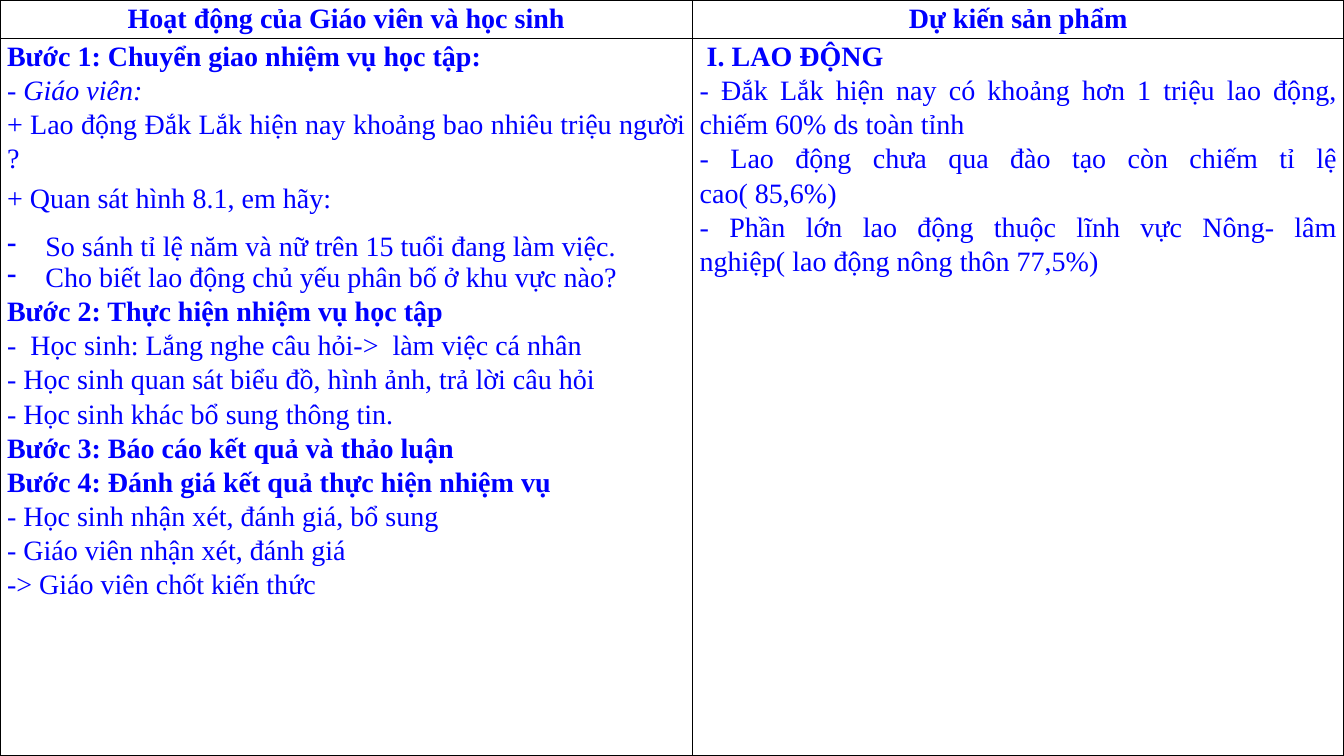
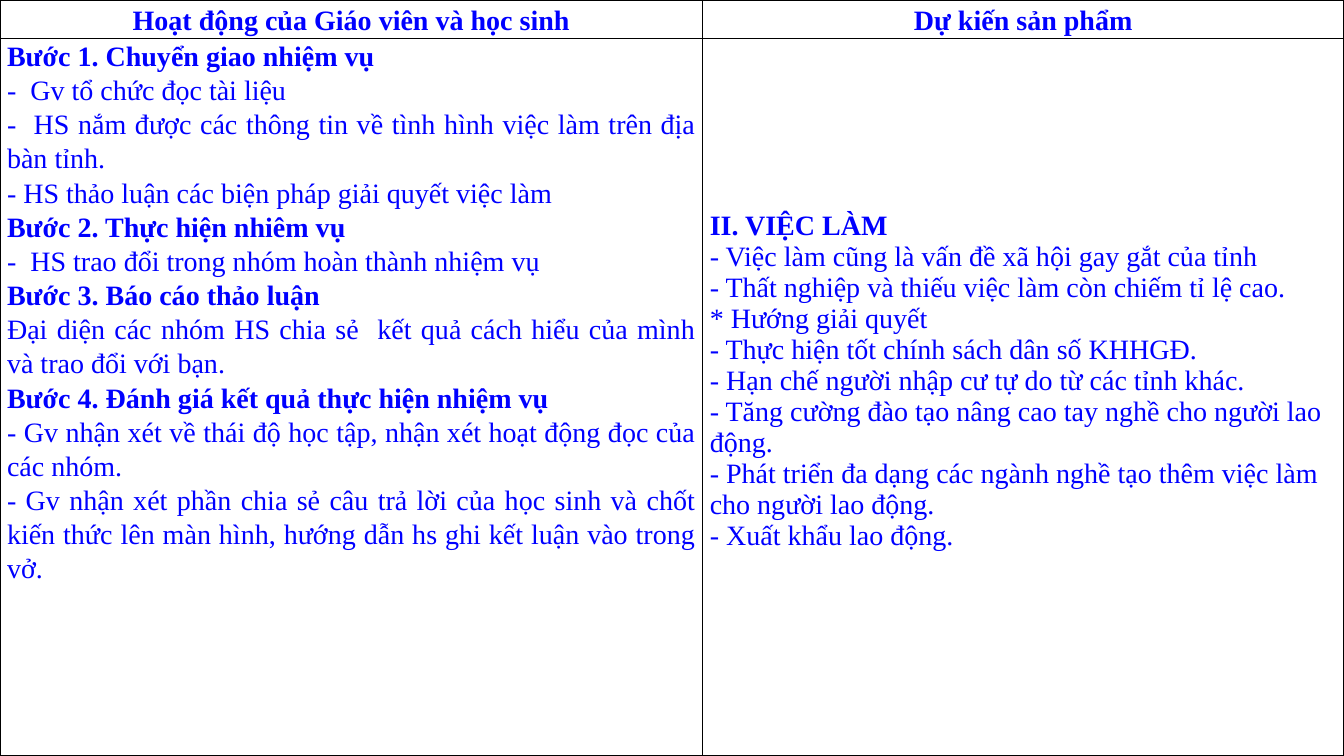
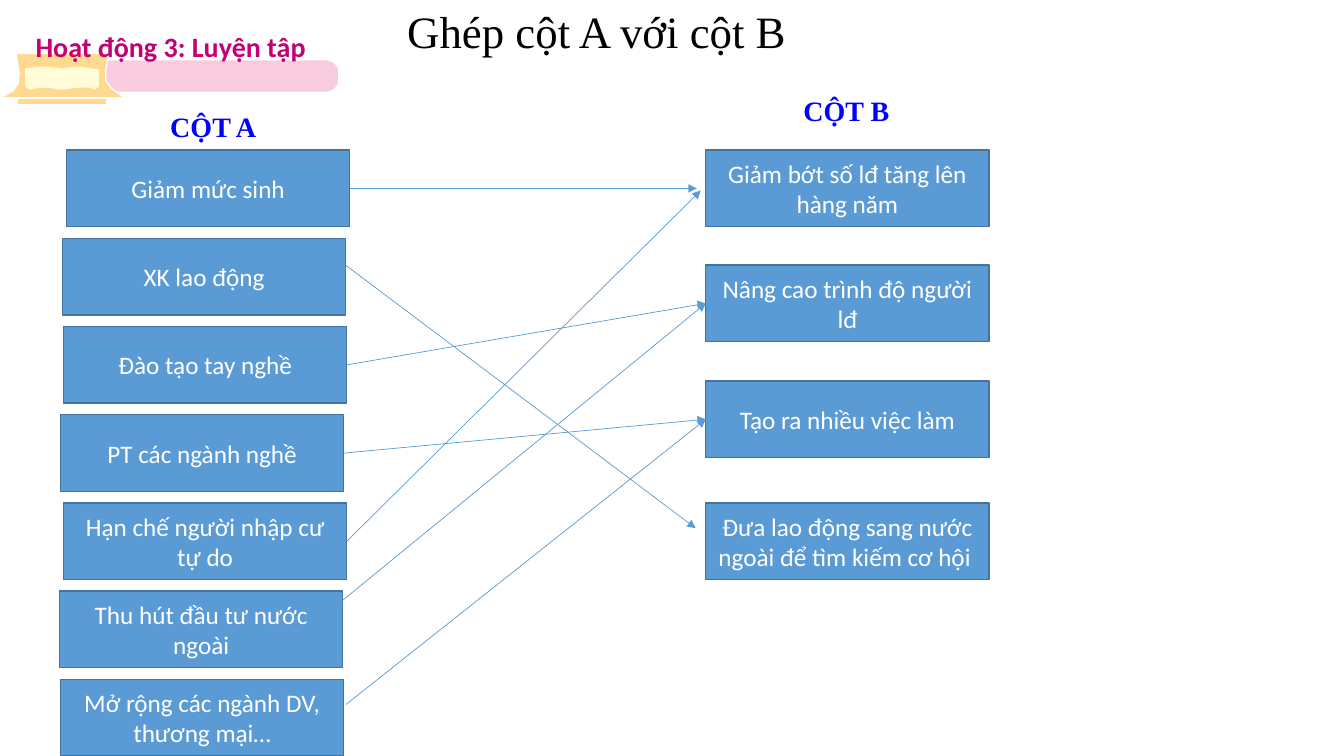
from lxml.etree import SubElement
from pptx import Presentation
from pptx.dml.color import RGBColor as RGB
from pptx.enum.shapes import MSO_CONNECTOR as CONNECTOR, MSO_SHAPE as SHAPE
from pptx.enum.text import MSO_ANCHOR as ANCHOR, PP_ALIGN as ALIGN
from pptx.oxml.ns import qn
from pptx.util import Inches, Pt

SLIDE_W, SLIDE_H = 13.33, 7.5
COLORS = {
    "ink": "000000", "paper": "FFFFFF", "lesson": "0000FF",
    "box": "5B9BD5", "box_line": "43739E",
    "band": "F9CBDF", "laptop": "FFD990", "page": "FFFCD7", "heading": "C40075",
}
SERIF, SANS = "Times New Roman", "Calibri"

STEP = {"bold": True}
DASH = {"bullet": "-", "spacing": None}
LEFT = {"align": ALIGN.LEFT, "spacing": None}

HEADERS = ["Hoạt động của Giáo viên và học sinh", "Dự kiến sản phẩm"]
LABOUR_STEPS = [
    ("Bước 1: Chuyển giao nhiệm vụ học tập:", STEP),
    ("- Giáo viên: ", {"italic": True}),
    ("+ Lao động Đắk Lắk hiện nay khoảng bao nhiêu triệu người ?", {}),
    ("+ Quan sát hình 8.1, em hãy:", {"spacing": None, "before": 6, "after": 6}),
    ("So sánh tỉ lệ năm và nữ trên 15 tuổi đang làm việc.", {**DASH, "before": 6}),
    ("Cho biết lao động chủ yếu phân bố ở khu vực nào?", DASH),
    ("Bước 2: Thực hiện nhiệm vụ học tập", STEP),
    ("-  Học sinh: Lắng nghe câu hỏi->  làm việc cá nhân ", {}),
    ("- Học sinh quan sát biểu đồ, hình ảnh, trả lời câu hỏi", {}),
    ("- Học sinh khác bổ sung thông tin.", {}),
    ("Bước 3: Báo cáo kết quả và thảo luận", STEP),
    ("Bước 4: Đánh giá kết quả thực hiện nhiệm vụ", STEP),
    ("- Học sinh nhận xét, đánh giá, bổ sung", {}),
    ("- Giáo viên nhận xét, đánh giá", {}),
    ("-> Giáo viên chốt kiến thức", {}),
]
LABOUR_RESULTS = [
    (" I. LAO ĐỘNG", STEP),
    ("- Đắk Lắk hiện nay có khoảng hơn 1 triệu lao động, chiếm 60% ds toàn tỉnh", {}),
    ("- Lao động chưa qua đào tạo còn chiếm tỉ lệ cao( 85,6%)", {}),
    ("- Phần lớn lao động thuộc lĩnh vực Nông- lâm nghiệp( lao động nông thôn 77,5%)", {}),
]
JOB_STEPS = [
    ("Bước 1. Chuyển giao nhiệm vụ", STEP),
    ("-  Gv tổ chức đọc tài liệu", {}),
    ("-  HS nắm được các thông tin về tình hình việc làm trên địa bàn tỉnh.", {}),
    ("- HS thảo luận các biện pháp giải quyết việc làm", {}),
    ("Bước 2. Thực hiện nhiêm vụ", STEP),
    ("-  HS trao đổi trong nhóm hoàn thành nhiệm vụ", {}),
    ("Bước 3. Báo cáo thảo luận", STEP),
    ("Đại diện các nhóm HS chia sẻ  kết quả cách hiểu của mình và trao đổi với bạn.", {}),
    ("Bước 4. Đánh giá kết quả thực hiện nhiệm vụ", STEP),
    ("- Gv nhận xét về thái độ học tập, nhận xét hoạt động đọc của các nhóm.", {}),
    ("- Gv nhận xét phần chia sẻ câu trả lời của học sinh và chốt kiến thức lên màn hình, "
     "hướng dẫn hs ghi kết luận vào trong vở.", {}),
]
JOB_RESULTS = [
    ("II. VIỆC LÀM", STEP),
    ("- Việc làm cũng là vấn đề xã hội gay gắt của tỉnh", LEFT),
    ("- Thất nghiệp và thiếu việc làm còn chiếm tỉ lệ cao.", LEFT),
    ("* Hướng giải quyết", LEFT),
    ("- Thực hiện tốt chính sách dân số KHHGĐ.", LEFT),
    ("- Hạn chế người nhập cư tự do từ các tỉnh khác.", LEFT),
    ("- Tăng cường đào tạo nâng cao tay nghề cho người lao động.", LEFT),
    ("- Phát triển đa dạng các ngành nghề tạo thêm việc làm cho người lao động.", LEFT),
    ("- Xuất khẩu lao động.", LEFT),
]

# Left offset and text of each box in column A; top offset and text in column B
COLUMN_A = [
    (0.07, "Giảm mức sinh"), (0.03, "XK lao động"), (0.04, "Đào tạo tay nghề"),
    (0.01, "PT các ngành nghề"), (0.04, "Hạn chế người nhập cư tự do"),
    (0, "Thu hút đầu tư nước ngoài"), (0.01, "Mở rộng các ngành DV, thương mại…"),
]
COLUMN_B = [
    (0.61, "Giảm bớt số lđ tăng lên hàng năm"), (1.75, "Nâng cao trình độ người lđ"),
    (2.9, "Tạo ra nhiều việc làm"), (4.11, "Đưa lao động sang nước ngoài để tìm kiếm cơ hội "),
]
# Each end is a box number in its column, or a free point
LINKS = [
    (0, (6.32, 0.99)), ((2.81, 1.73), (6.31, 4.36)), (2, 1), ((2.84, 6.11), 2),
    (3, 2), (4, (6.36, 1.01)), ((2.51, 5.32), 1),
]


def rgb(name):
    return RGB.from_string(COLORS[name])


def write(tf, text, size=20, font=SERIF, color="lesson", bold=False, italic=False,
          align=ALIGN.LEFT, spacing=None, before=0, after=0, bullet=None):
    """Add one paragraph, using the first one while it is still empty."""
    p = tf.paragraphs[0]
    if p.runs:
        p = tf.add_paragraph()
    p.alignment = align
    p.line_spacing = spacing
    p.space_before, p.space_after = Pt(before), Pt(after)
    if bullet:
        pPr = p._p.get_or_add_pPr()
        pPr.set("marL", str(Inches(0.38)))
        pPr.set("indent", str(Inches(-0.38)))
        SubElement(pPr, qn("a:buChar"), char=bullet)
    r = p.add_run()
    r.text = text
    r.font.size, r.font.name = Pt(size), font
    r.font.bold, r.font.italic = bold, italic
    r.font.color.rgb = rgb(color)


def paint(sp, fill, line=None):
    sp.shadow.inherit = False
    sp.fill.solid()
    sp.fill.fore_color.rgb = rgb(fill)
    if line:
        sp.line.color.rgb = rgb(line)
        sp.line.width = Pt(1)
    else:
        sp.line.fill.background()


def add_rect(shapes, x, y, w, h, fill, line):
    sp = shapes.add_shape(SHAPE.RECTANGLE, Inches(x), Inches(y), Inches(w), Inches(h))
    paint(sp, fill, line)
    return sp


def add_outline(shapes, x, y, points, fill, line=None):
    corners = [(Inches(x + dx), Inches(y + dy)) for dx, dy in points]
    builder = shapes.build_freeform(*corners[0])
    builder.add_line_segments(corners[1:], close=True)
    paint(builder.convert_to_shape(), fill, line)


def add_label(shapes, x, y, w, h, text, wrap=True, inset=True, anchor=ANCHOR.TOP, **fmt):
    tf = shapes.add_textbox(Inches(x), Inches(y), Inches(w), Inches(h)).text_frame
    tf.word_wrap, tf.vertical_anchor = wrap, anchor
    if not inset:
        tf.margin_left = tf.margin_right = tf.margin_top = tf.margin_bottom = 0
    write(tf, text, **fmt)


def style_cell(cell, anchor):
    cell.margin_left = cell.margin_right = Inches(0.07)
    cell.margin_top = cell.margin_bottom = 0
    cell.vertical_anchor = anchor
    tcPr = cell._tc.get_or_add_tcPr()
    for side in ("a:lnL", "a:lnR", "a:lnT", "a:lnB"):
        ln = SubElement(tcPr, qn(side), w=str(Pt(1)))
        SubElement(SubElement(ln, qn("a:solidFill")), qn("a:srgbClr"), val=COLORS["ink"])
    cell.fill.solid()
    cell.fill.fore_color.rgb = rgb("paper")


def add_lesson_table(slide, x, y, w, h, split, steps, results, anchors):
    """split is the width of the left column; anchors are those of header and results."""
    header_h = 0.38
    head_anchor, result_anchor = anchors
    table = slide.shapes.add_table(2, 2, Inches(x), Inches(y), Inches(w), Inches(h)).table
    for col, width in zip(table.columns, (split, w - split)):
        col.width = Inches(width)
    for row, height in zip(table.rows, (header_h, h - header_h)):
        row.height = Inches(height)
    for i, (header, body) in enumerate(zip(HEADERS, (steps, results))):
        head, cell = table.cell(0, i), table.cell(1, i)
        style_cell(head, head_anchor)
        style_cell(cell, result_anchor if i else ANCHOR.TOP)
        write(head.text_frame, header, bold=True, align=ALIGN.CENTER, spacing=1.1)
        for text, fmt in body:
            write(cell.text_frame, text, **{"align": ALIGN.JUSTIFY, "spacing": 1.1, **fmt})
    if result_anchor == ANCHOR.MIDDLE:
        table.cell(1, 1).margin_bottom = Inches(0.35)


def add_activity_banner(slide, x, y):
    shapes = slide.shapes.add_group_shape().shapes
    band_w, band_h = 2.38, 0.31
    corner = [(0, 0.08), (0.02, 0.05), (0.05, 0.02), (0.11, 0), (0.18, 0)]
    top = corner + [(band_w - dx, dy) for dx, dy in reversed(corner)]
    band = top + [(dx, band_h - dy) for dx, dy in reversed(top)]
    add_outline(shapes, x + 0.96, y + 0.31, band, "band")
    laptop = [(0.15, 0), (0.18, 0.19), (0.17, 0.3), (0.12, 0.37), (0, 0.44),
              (1.23, 0.44), (1.1, 0.35), (1.04, 0.27), (1.04, 0.17), (1.07, 0)]
    add_outline(shapes, x, y + 0.24, laptop, "laptop", "paper")
    page = [(0, 0.02), (0.07, 0.01), (0.19, 0), (0.3, 0.01), (0.37, 0.02), (0.43, 0.01),
            (0.54, 0), (0.61, 0.01), (0.73, 0.03), (0.73, 0.2), (0.69, 0.23), (0.64, 0.21),
            (0.54, 0.21), (0.44, 0.22), (0.39, 0.23), (0.34, 0.23), (0.29, 0.22),
            (0.19, 0.21), (0.09, 0.22), (0.04, 0.23), (0, 0.2)]
    add_outline(shapes, x + 0.24, y + 0.37, page, "page")
    add_rect(shapes, x + 0.16, y + 0.69, 0.89, 0.06, "laptop", "paper")
    add_label(shapes, x + 0.28, y, 3.36, 0.55, " Hoạt động 3: Luyện tập",
              inset=False, font=SANS, color="heading", bold=True)


def add_answer_box(slide, x, y, text):
    sp = add_rect(slide.shapes, x, y, 2.81, 0.76, "box", "box_line")
    sp.text_frame.word_wrap = True
    sp.text_frame.vertical_anchor = ANCHOR.MIDDLE
    write(sp.text_frame, text, size=18, font=SANS, color="paper", align=ALIGN.CENTER)
    return sp


def add_arrow(slide, x, y, start, end, boxes_a, boxes_b):
    start_joined, end_joined = isinstance(start, int), isinstance(end, int)
    x1, y1 = (0, 0) if start_joined else start
    x2, y2 = (0, 0) if end_joined else end
    cn = slide.shapes.add_connector(CONNECTOR.STRAIGHT, Inches(x + x1), Inches(y + y1),
                                    Inches(x + x2), Inches(y + y2))
    if start_joined:
        cn.begin_connect(boxes_a[start], 3)
    if end_joined:
        cn.end_connect(boxes_b[end], 1)
    cn.line.color.rgb = rgb("box")
    cn.line.width = Pt(0.5)
    SubElement(cn.line._get_or_add_ln(), qn("a:tailEnd"), type="triangle")
    SubElement(cn._element.spPr, qn("a:effectLst"))


def add_matching(slide, x, y):
    first_top, pitch = 0.61, 5.25 / (len(COLUMN_A) - 1)
    boxes_a = [add_answer_box(slide, x + dx, y + first_top + i * pitch, text)
               for i, (dx, text) in enumerate(COLUMN_A)]
    boxes_b = [add_answer_box(slide, x + 6.41, y + dy, text) for dy, text in COLUMN_B]
    for dx, dy, text in ((1, 0.16, "CỘT A"), (7.28, 0, "CỘT B")):
        add_label(slide.shapes, x + dx, y + dy, 1.06, 0.44, text, wrap=False, bold=True)
    for start, end in LINKS:
        add_arrow(slide, x, y, start, end, boxes_a, boxes_b)


def main():
    prs = Presentation()
    prs.slide_width, prs.slide_height = Inches(SLIDE_W), Inches(SLIDE_H)
    labour, jobs, practice = [prs.slides.add_slide(prs.slide_layouts[6]) for _ in range(3)]

    add_lesson_table(labour, 0, 0, SLIDE_W, SLIDE_H, 6.87, LABOUR_STEPS, LABOUR_RESULTS,
                     (ANCHOR.TOP, ANCHOR.TOP))
    add_lesson_table(jobs, 0, 0, SLIDE_W, SLIDE_H, 6.97, JOB_STEPS, JOB_RESULTS,
                     (ANCHOR.MIDDLE, ANCHOR.MIDDLE))

    add_activity_banner(practice, 0.01, 0.29)
    add_label(practice.shapes, 3.94, -0.02, 6.25, 0.64, "Ghép cột A với cột B",
              anchor=ANCHOR.MIDDLE, size=32, color="ink")
    add_matching(practice, 0.59, 0.88)

    prs.save("out.pptx")


if __name__ == "__main__":
    main()
